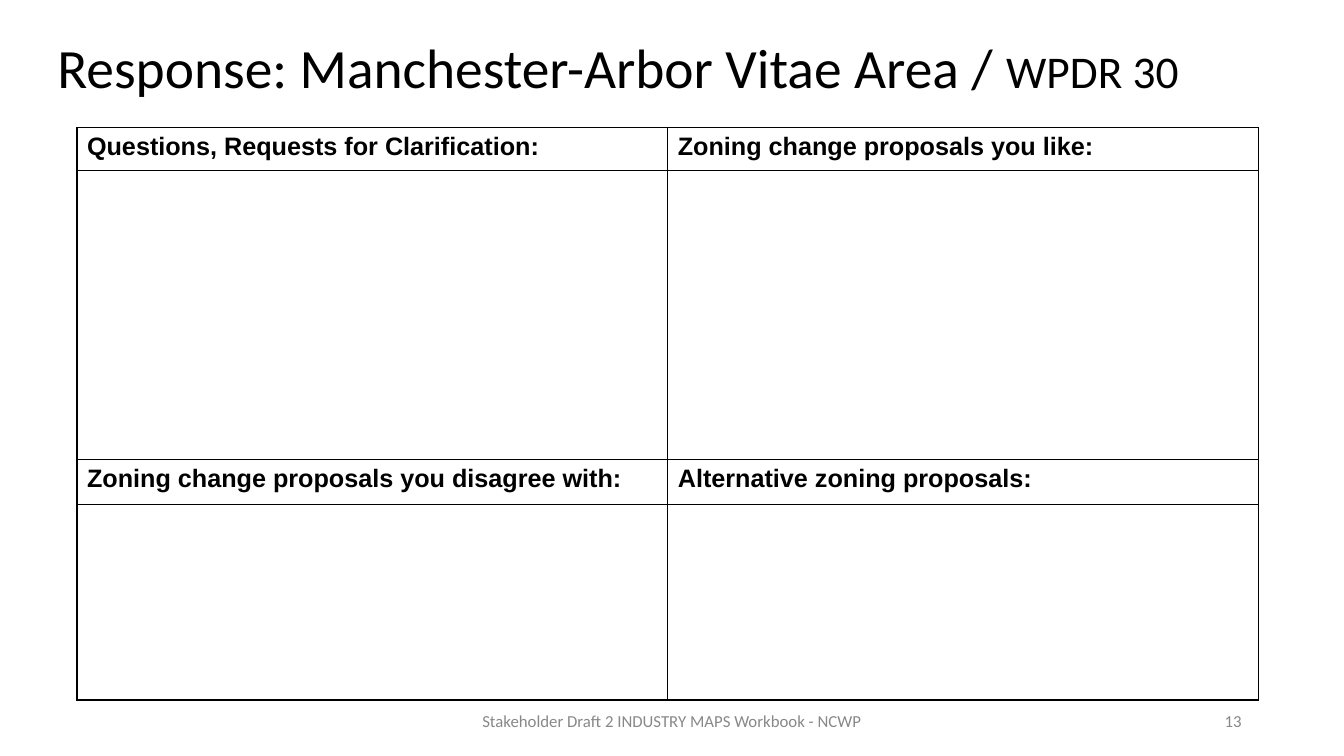
import lxml.etree
import pptx
import pptx.dml.color
import pptx.enum.text
import pptx.oxml.ns
import pptx.util

Pt = pptx.util.Pt
Align = pptx.enum.text.PP_ALIGN
Anchor = pptx.enum.text.MSO_ANCHOR
qn = pptx.oxml.ns.qn
COLOURS = {"ink": "000000", "paper": "FFFFFF", "footer": "888888"}


def add_text(frame, text, size, font="Calibri", colour="ink", bold=False, align=Align.LEFT):
    """Append a formatted span to the frame's first paragraph."""
    para = frame.paragraphs[0]
    para.alignment = align
    span = para.add_run()
    span.text = text
    span.font.size = Pt(size)
    span.font.name = font
    span.font.bold = bold
    span.font.color.rgb = pptx.dml.color.RGBColor.from_string(COLOURS[colour])


def add_borders(cell, colour="ink", width=1):
    """Draw a solid line on all four sides of a table cell."""
    properties = cell._tc.get_or_add_tcPr()
    for side in ("lnL", "lnR", "lnT", "lnB"):
        line = lxml.etree.SubElement(properties, qn(f"a:{side}"), w=str(Pt(width)))
        fill = lxml.etree.SubElement(line, qn("a:solidFill"))
        lxml.etree.SubElement(fill, qn("a:srgbClr"), val=COLOURS[colour])


deck = pptx.Presentation()
deck.slide_width, deck.slide_height = Pt(960), Pt(540)
page = deck.slides.add_slide(deck.slide_layouts.get_by_name("Title Only"))
page.background.fill.solid()
page.background.fill.fore_color.rgb = pptx.dml.color.RGBColor.from_string(COLOURS["paper"])

# Title
title = page.shapes.title
title.left, title.top, title.width, title.height = Pt(33.8), Pt(28.8), Pt(860.4), Pt(42.5)
title.text_frame.auto_size = pptx.enum.text.MSO_AUTO_SIZE.NONE
title.text_frame.vertical_anchor = Anchor.MIDDLE
title.text_frame.paragraphs[0].line_spacing = 0.9
add_text(title.text_frame, "Response: Manchester-Arbor Vitae Area / ", size=39.6)
add_text(title.text_frame, "WPDR 30", size=32.4)

# Response table: heading rows alternate with empty writing rows
headings = [
    ("Questions, Requests for Clarification:", "Zoning change proposals you like:"),
    ("Zoning change proposals you disagree with:", "Alternative zoning proposals:"),
]
row_heights = [31, 206, 32.5, 139.5]
column_width = 422
table = page.shapes.add_table(
    len(row_heights), 2, Pt(55), Pt(91), Pt(2 * column_width), Pt(sum(row_heights))
).table
table.first_row = table.horz_banding = False
for column in table.columns:
    column.width = Pt(column_width)
for row, height in zip(table.rows, row_heights):
    row.height = Pt(height)
for cell in table.iter_cells():
    add_borders(cell)
    cell.fill.background()
for pair_index, pair in enumerate(headings):
    for column_index, heading in enumerate(pair):
        cell = table.cell(2 * pair_index, column_index)
        add_text(cell.text_frame, heading, size=18, font="Arial", bold=True)

# Footer and page number
footers = [
    ("Stakeholder Draft 2 INDUSTRY MAPS Workbook - NCWP", 318, 324, Align.CENTER),
    ("13", 678, 216, Align.RIGHT),
]
for text, left, width, align in footers:
    box = page.shapes.add_textbox(Pt(left), Pt(500.5), Pt(width), Pt(28.8))
    box.text_frame.word_wrap = True
    box.text_frame.vertical_anchor = Anchor.MIDDLE
    add_text(box.text_frame, text, size=12, colour="footer", align=align)

deck.save("out.pptx")
